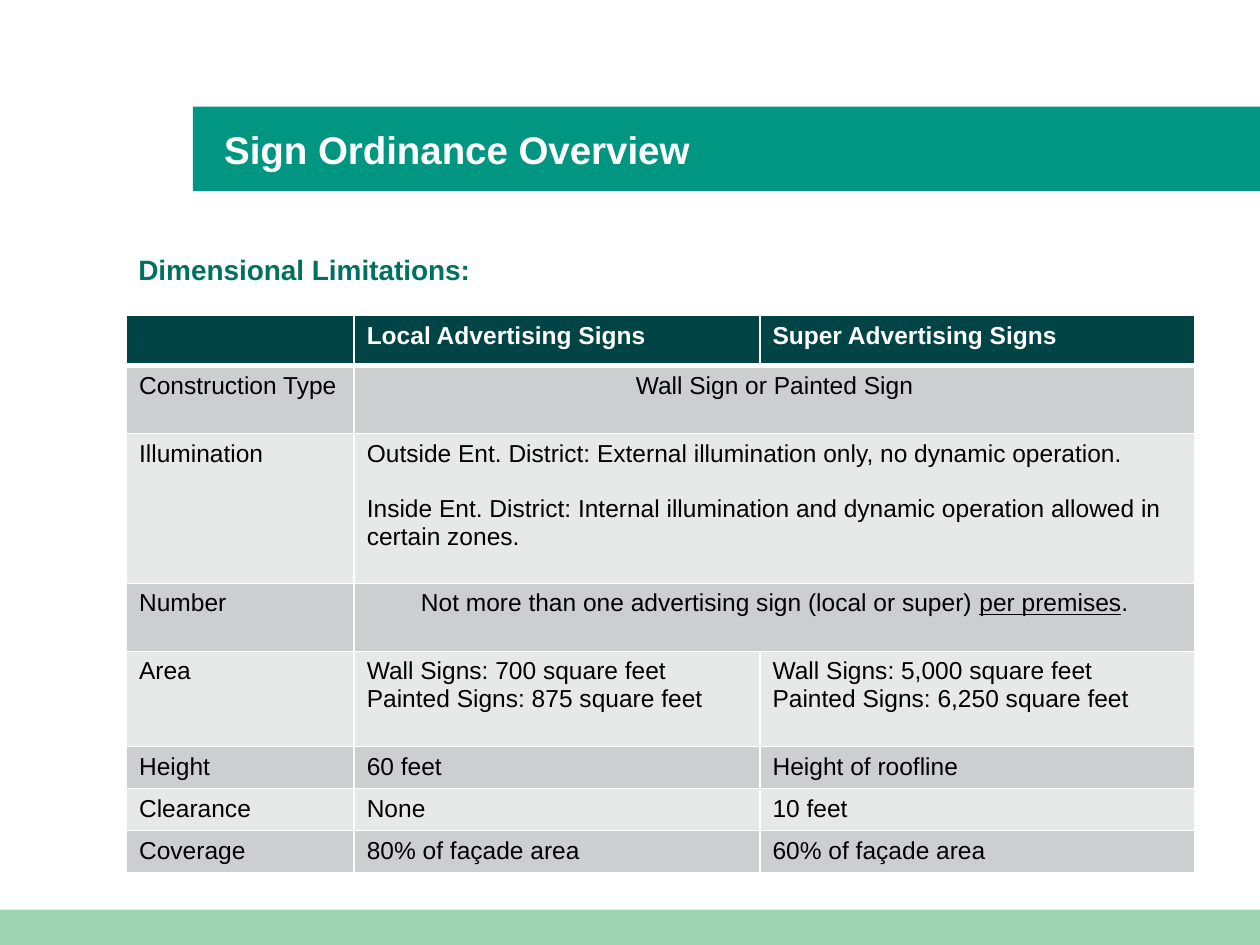
from lxml import etree
from pptx import Presentation
from pptx.dml.color import RGBColor
from pptx.enum.shapes import MSO_SHAPE as Shape
from pptx.enum.text import MSO_ANCHOR as Anchor, PP_ALIGN as Align
from pptx.oxml.ns import qn
from pptx.util import Cm, Pt

COLORS = {
    "banner": "009681", "footer": "9FD4B3", "heading": "007061",
    "header_row": "004445", "dark_row": "CCCFCF", "light_row": "E7E9E9",
    "white": "FFFFFF", "black": "000000",
}
FONT = "Arial"
SLIDE_WIDTH, SLIDE_HEIGHT = 25.4, 19.05

COLUMN_WIDTHS = [4.59, 8.18, 8.77]
ROW_HEIGHTS = [1.01, 1.37, 3.02, 1.37, 1.92, 0.82, 0.82, 0.82]
# A cell is a list of paragraphs; a row with two cells merges the last two columns.
ROWS = [
    [[], ["Local Advertising Signs"], ["Super Advertising Signs"]],
    [["Construction Type"], ["Wall Sign or Painted Sign"]],
    [["Illumination"],
     ["Outside Ent. District: External illumination only, no dynamic operation.",
      "Inside Ent. District: Internal illumination and dynamic operation allowed "
      "in certain zones."]],
    [["Number"], ["Not more than one advertising sign (local or super) _per premises_."]],
    [["Area"],
     ["Wall Signs: 700 square feet", "Painted Signs: 875 square feet"],
     ["Wall Signs: 5,000 square feet", "Painted Signs: 6,250 square feet"]],
    [["Height"], ["60 feet"], ["Height of roofline"]],
    [["Clearance"], ["None"], ["10 feet"]],
    [["Coverage"], ["80% of façade area"], ["60% of façade area"]],
]


def rgb(name):
    return RGBColor.from_string(COLORS[name])


def style(paragraph, size, color, bold=False):
    font = paragraph.font
    font.name, font.size, font.bold = FONT, Pt(size), bold
    font.color.rgb = rgb(color)


def add_bar(slide, left, top, width, height, color):
    shape = slide.shapes.add_shape(
        Shape.RECTANGLE, Cm(left), Cm(top), Cm(width), Cm(height))
    shape.shadow.inherit = False
    shape.fill.solid()
    shape.fill.fore_color.rgb = rgb(color)
    shape.line.fill.background()


def add_label(slide, left, top, width, height, text, size, color, inset=0, wrap=True):
    frame = slide.shapes.add_textbox(
        Cm(left), Cm(top), Cm(width), Cm(height)).text_frame
    frame.word_wrap = wrap
    frame.vertical_anchor = Anchor.MIDDLE
    frame.margin_left = frame.margin_right = Cm(inset)
    frame.margin_top = frame.margin_bottom = 0
    paragraph = frame.paragraphs[0]
    paragraph.text = text
    style(paragraph, size, color, bold=True)


def add_title_banner(slide, left, top, width, height):
    add_bar(slide, left, top, width, height, "banner")
    add_label(slide, left + 0.63, top, width - 2.1, height,
              "Sign Ordinance Overview", 22, "white")


def set_borders(cell, top, bottom):
    properties = cell._tc.get_or_add_tcPr()
    widths = [("a:lnL", 1), ("a:lnR", 1), ("a:lnT", top), ("a:lnB", bottom)]
    for position, (tag, width) in enumerate(widths):
        line = etree.Element(qn(tag), w=str(Pt(width)))
        fill = etree.SubElement(line, qn("a:solidFill"))
        etree.SubElement(fill, qn("a:srgbClr"), val=COLORS["white"])
        properties.insert(position, line)


def fill_cell(cell, texts, color, bold, centered, gap):
    frame = cell.text_frame
    for index, text in enumerate(texts or [""]):
        paragraph = frame.paragraphs[0] if index == 0 else frame.add_paragraph()
        # Underscores enclose underlined words
        for part, words in enumerate(text.split("_")):
            if words:
                run = paragraph.add_run()
                run.text = words
                if part % 2:
                    run.font.underline = True
        style(paragraph, 14, color, bold)
        if centered:
            paragraph.alignment = Align.CENTER
        if index and gap:
            paragraph.space_before = Pt(gap)


def add_limits_table(slide, left, top):
    table = slide.shapes.add_table(
        len(ROWS), len(COLUMN_WIDTHS), Cm(left), Cm(top),
        Cm(sum(COLUMN_WIDTHS)), Cm(sum(ROW_HEIGHTS))).table
    for column, width in zip(table.columns, COLUMN_WIDTHS):
        column.width = Cm(width)
    for index, (texts, height) in enumerate(zip(ROWS, ROW_HEIGHTS)):
        table.rows[index].height = Cm(height)
        header, merged = index == 0, len(texts) == 2
        band = "header_row" if header else "dark_row" if index % 2 else "light_row"
        for column in range(len(COLUMN_WIDTHS)):
            cell = table.cell(index, column)
            cell.fill.solid()
            cell.fill.fore_color.rgb = rgb(band)
            set_borders(cell, 3 if index == 1 else 1, 3 if header else 1)
        if merged:
            table.cell(index, 1).merge(table.cell(index, 2))
        for column, paragraphs in enumerate(texts):
            spanning = merged and column == 1
            fill_cell(table.cell(index, column), paragraphs,
                      "white" if header else "black", header,
                      centered=spanning and len(paragraphs) == 1,
                      gap=16 if spanning else 0)


def main():
    presentation = Presentation()
    presentation.slide_width = Cm(SLIDE_WIDTH)
    presentation.slide_height = Cm(SLIDE_HEIGHT)
    slide = presentation.slides.add_slide(presentation.slide_layouts[6])

    # Title banner and footer strip
    add_title_banner(slide, 3.89, 2.15, SLIDE_WIDTH - 3.89, 1.7)
    add_bar(slide, 0, SLIDE_HEIGHT - 0.71, SLIDE_WIDTH, 0.71, "footer")

    # Heading and table of limits
    add_limits_table(slide, 2.55, 6.36)
    add_label(slide, 2.54, 5.08, 7.29, 0.69, "Dimensional Limitations:",
              16, "heading", inset=0.25, wrap=False)

    presentation.save("out.pptx")


if __name__ == "__main__":
    main()
